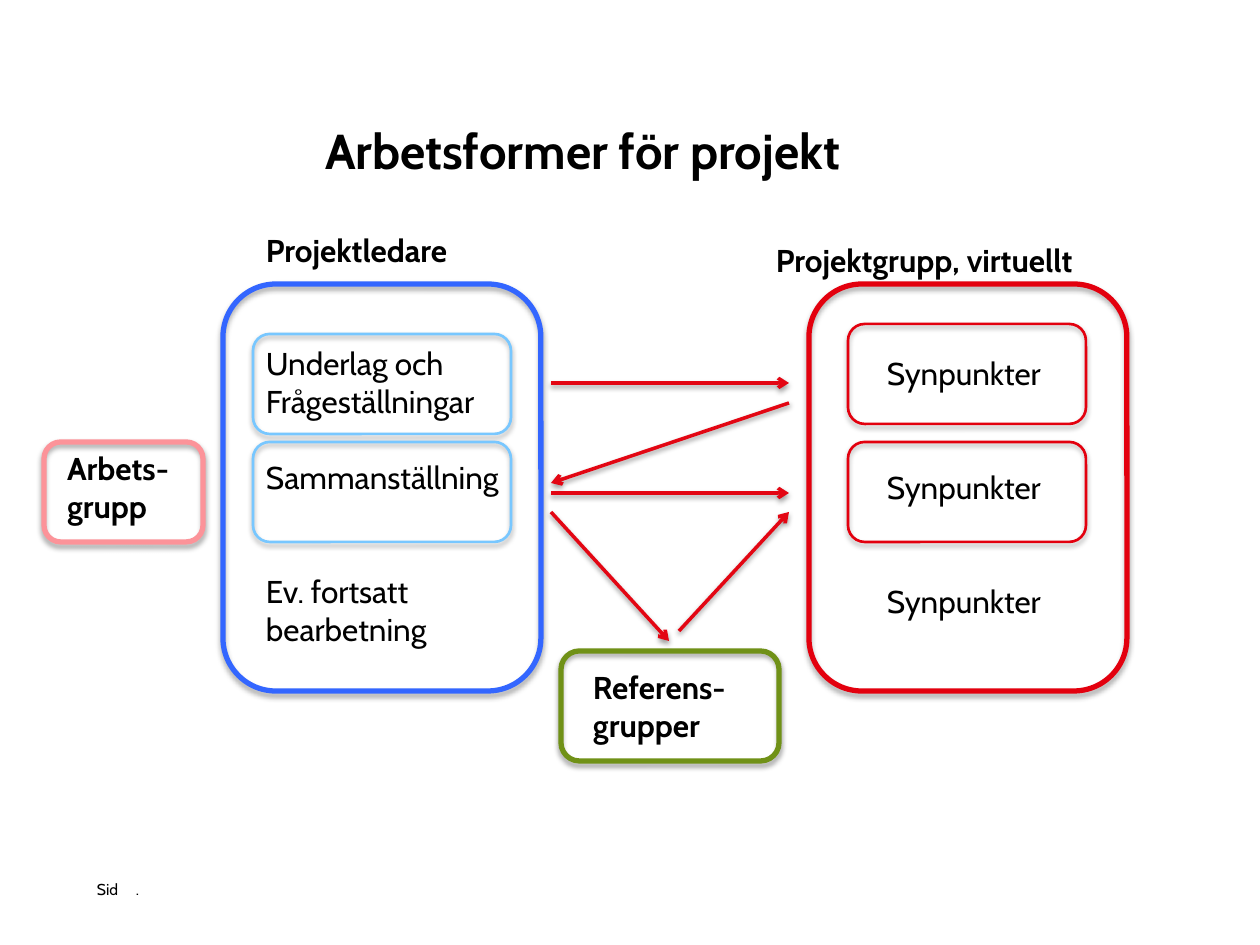
import pptx
import pptx.dml.color
import pptx.enum.shapes
import pptx.oxml
import pptx.oxml.ns
import pptx.util

EMU_PER_PX = 914400 / 126
BLACK = pptx.dml.color.RGBColor(0x00, 0x00, 0x00)
BLUE = pptx.dml.color.RGBColor(0x33, 0x66, 0xFF)
LIGHT_BLUE = pptx.dml.color.RGBColor(0x78, 0xC7, 0xFF)
RED = pptx.dml.color.RGBColor(0xE3, 0x00, 0x0E)
ARROW_RED = pptx.dml.color.RGBColor(0xE3, 0x06, 0x13)
GREEN = pptx.dml.color.RGBColor(0x70, 0x91, 0x17)
PINK = pptx.dml.color.RGBColor(0xFC, 0x93, 0x99)


def px(length):
    return pptx.util.Emu(round(length * EMU_PER_PX))


def write_text(text_frame, text, *, font="Cabin", size=18, bold=False, color=BLACK):
    """Write one paragraph for each line of text."""
    for index, line in enumerate(text.split("\n")):
        paragraph = text_frame.paragraphs[0] if index == 0 else text_frame.add_paragraph()
        run = paragraph.add_run()
        run.text = line
        run.font.name = font
        run.font.size = pptx.util.Pt(size)
        run.font.bold = bold
        run.font.color.rgb = color


def add_shadow(shape, distance, opacity):
    """Add a soft black shadow falling straight down; the line must be set already."""
    shape._element.spPr.append(pptx.oxml.parse_xml(
        f'<a:effectLst {pptx.oxml.ns.nsdecls("a")}>'
        f'<a:outerShdw blurRad="{pptx.util.Pt(3.1)}" dist="{pptx.util.Pt(distance)}" '
        'dir="5400000" rotWithShape="0"><a:srgbClr val="000000">'
        f'<a:alpha val="{opacity * 1000}"/></a:srgbClr></a:outerShdw></a:effectLst>'))


class SlideBuilder:
    def __init__(self, slide):
        self.slide = slide

    def label(self, left, top, width, height, text, **text_format):
        box = self.slide.shapes.add_textbox(px(left), px(top), px(width), px(height))
        frame = box.text_frame
        frame.word_wrap = True
        frame.margin_left = frame.margin_right = 0
        frame.margin_top = frame.margin_bottom = 0
        write_text(frame, text, **text_format)

    def frame(self, left, top, width, height, color, weight=3):
        """Draw an unfilled rounded rectangle."""
        shape = self.slide.shapes.add_shape(
            pptx.enum.shapes.MSO_SHAPE.ROUNDED_RECTANGLE,
            px(left), px(top), px(width), px(height))
        shape.fill.background()
        shape.line.color.rgb = color
        shape.line.width = pptx.util.Pt(weight)
        add_shadow(shape, distance=1.8, opacity=35)

    def arrow(self, start, end):
        connector = self.slide.shapes.add_connector(
            pptx.enum.shapes.MSO_CONNECTOR.STRAIGHT,
            *(px(length) for length in start + end))
        connector.line.color.rgb = ARROW_RED
        connector.line.width = pptx.util.Pt(2)
        connector.line._get_or_add_ln().append(pptx.oxml.parse_xml(
            f'<a:tailEnd {pptx.oxml.ns.nsdecls("a")} type="arrow"/>'))
        add_shadow(connector, distance=1.6, opacity=38)


def main():
    presentation = pptx.Presentation()
    presentation.slide_width = px(1260)
    presentation.slide_height = px(945)
    builder = SlideBuilder(presentation.slides.add_slide(presentation.slide_layouts[6]))

    builder.label(325, 121, 612, 60, "Arbetsformer för projekt", size=28, bold=True)
    builder.label(97, 880, 30, 19, "Sid", size=9)
    builder.label(136, 880, 10, 19, ".", size=9)

    for left, color in ((223, BLUE), (809, RED)):
        builder.frame(left, 284, 318, 407, color)
    for top in (334, 442):
        builder.frame(253, top, 258, 100, LIGHT_BLUE, weight=1.5)
    for top in (324, 442):
        builder.frame(848, top, 238, 100, RED, weight=1.5)
    builder.frame(561, 651, 218, 110, GREEN)
    builder.frame(44, 442, 159, 100, PINK)

    builder.label(266, 231, 245, 38, "Projektledare", bold=True)
    builder.label(776, 241, 350, 38, "Projektgrupp, virtuellt", bold=True)
    builder.label(593, 668, 170, 76, "Referens-\ngrupper", bold=True)
    builder.label(67, 449, 130, 76, "Arbets-\ngrupp", bold=True)

    row_gap = 114
    steps = ("Underlag och\nFrågeställningar", "Sammanställning", "Ev. fortsatt\nbearbetning")
    for row, step in enumerate(steps):
        builder.label(266, 344 + row * row_gap, 250, 76, step)
        builder.label(887, 354 + row * row_gap, 190, 38, "Synpunkter")

    leader_edge, group_edge = 551, 789
    for start, end in (
        ((leader_edge, 383), (group_edge, 383)),
        ((group_edge, 403), (leader_edge, 483)),
        ((leader_edge, 493), (group_edge, 493)),
        ((leader_edge, 512), (669, 641)),
        ((679, 631), (group_edge, 512)),
    ):
        builder.arrow(start, end)

    presentation.save("out.pptx")


if __name__ == "__main__":
    main()
